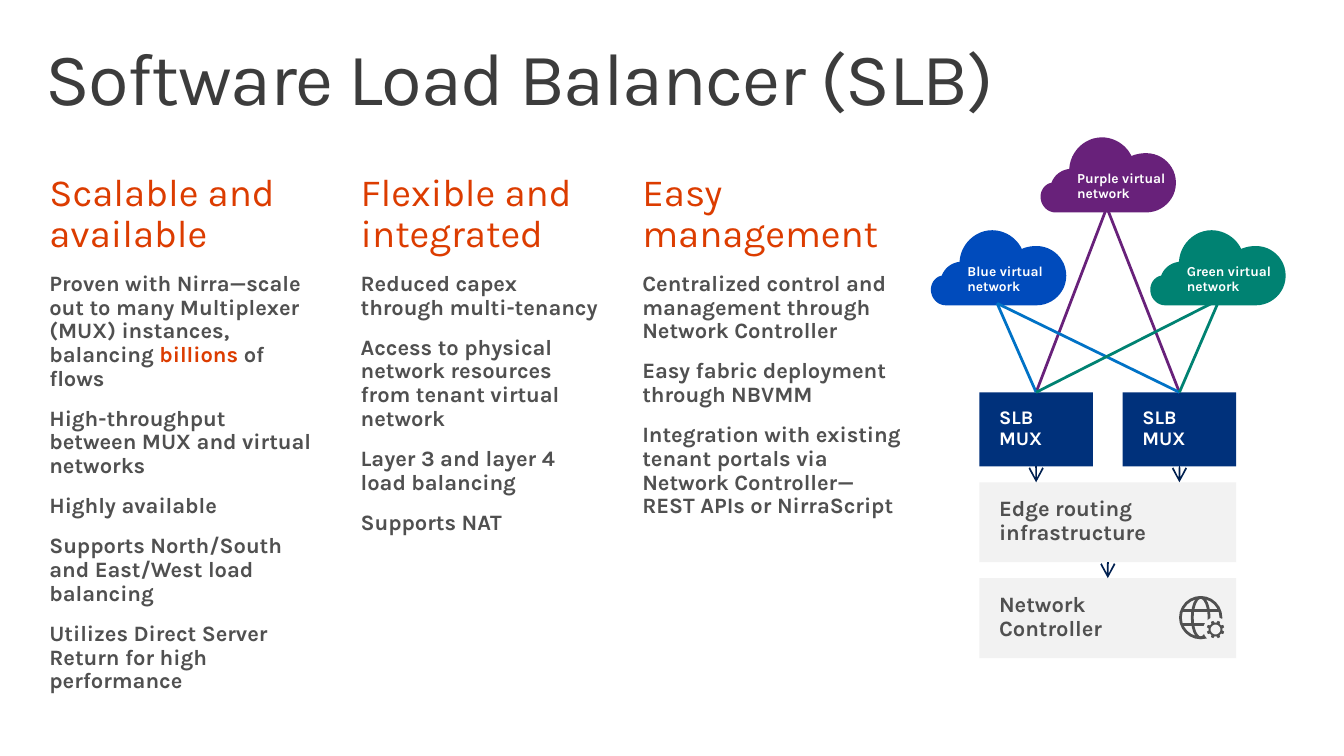
from math import cos, pi, sin

from lxml.etree import SubElement
from pptx import Presentation
from pptx.dml.color import RGBColor
from pptx.enum.shapes import MSO_CONNECTOR as Connector, MSO_SHAPE as Shape
from pptx.enum.text import MSO_ANCHOR as Anchor, PP_ALIGN as Align
from pptx.oxml.ns import qn
from pptx.util import Inches, Pt

FONT = "Karla"
WHITE = RGBColor(0xFF, 0xFF, 0xFF)
CHARCOAL = RGBColor(0x3C, 0x3C, 0x3C)
GRAY = RGBColor(0x50, 0x50, 0x50)
PANEL = RGBColor(0xF2, 0xF2, 0xF2)
ORANGE = RGBColor(0xDC, 0x3C, 0x00)
PURPLE = RGBColor(0x68, 0x21, 0x7A)
BLUE = RGBColor(0x00, 0x4B, 0xBC)
BRIGHT_BLUE = RGBColor(0x00, 0x72, 0xC6)
GREEN = RGBColor(0x00, 0x82, 0x72)
NAVY = RGBColor(0x00, 0x31, 0x7B)
ARROW_NAVY = RGBColor(0x00, 0x20, 0x50)

HIGHLIGHT = "billions"
# Left, width, heading and points of each column
COLUMNS = [
    (0.3, 3, "Scalable and available", [
        "Proven with Nirra—scale out to many Multiplexer (MUX) instances, "
        "balancing billions of flows",
        "High-throughput between MUX and virtual networks",
        "Highly available",
        "Supports North/South and East/West load balancing",
        "Utilizes Direct Server Return for high performance"]),
    (3.45, 2.7, "Flexible and integrated", [
        "Reduced capex\nthrough multi-tenancy",
        "Access to physical\nnetwork resources from tenant virtual network",
        "Layer 3 and layer 4\nload balancing",
        "Supports NAT"]),
    (6.3, 3, "Easy management", [
        "Centralized control and management through Network Controller",
        "Easy fabric deployment through NBVMM",
        "Integration with existing tenant portals via\n"
        "Network Controller—\nREST APIs or NirraScript"]),
]

# Left, top, label, fill, link colour and link start of each cloud
CLOUDS = [
    (1.11, 0, "Purple virtual network", PURPLE, PURPLE, (0.67, 0.71)),
    (0, 0.94, "Blue virtual network", BLUE, BRIGHT_BLUE, (0.67, 0.74)),
    (2.22, 0.94, "Green virtual\nnetwork", GREEN, GREEN, (0.7, 0.7)),
]
CLOUD_START = (0.15, 0.76)
CLOUD_CURVES = [
    ((0.07, 0.76), (0, 0.69), (0, 0.6)),
    ((0, 0.53), (0.05, 0.47), (0.11, 0.46)),
    ((0.14, 0.38), (0.21, 0.33), (0.29, 0.32)),
    ((0.3, 0.14), (0.45, 0), (0.62, 0)),
    ((0.75, 0), (0.87, 0.08), (0.92, 0.19)),
    ((0.96, 0.17), (1.02, 0.16), (1.07, 0.16)),
    ((1.23, 0.16), (1.37, 0.29), (1.37, 0.46)),
    ((1.37, 0.63), (1.23, 0.76), (1.07, 0.76)),
]


def write(para, text, size, color, bold=False, before=0):
    lead, word, rest = text.partition(HIGHLIGHT)
    para.text = lead
    if word:
        span = para.add_run()
        span.text = word
        span.font.color.rgb = ORANGE
        para.add_run().text = rest
    para.alignment = Align.LEFT
    para.line_spacing = 0.9
    para.space_before = Pt(before)
    font = para.font
    font.name, font.size, font.bold = FONT, Pt(size), bold
    font.color.rgb = color


def set_frame(shape, left=0, top=0, right=0):
    frame = shape.text_frame
    frame.word_wrap = True
    frame.vertical_anchor = Anchor.TOP
    frame.margin_left, frame.margin_right = Inches(left), Inches(right)
    frame.margin_top = frame.margin_bottom = Inches(top)
    return frame


def add_text_box(page, x, y, width, height, *margins):
    box = page.shapes.add_textbox(Inches(x), Inches(y), Inches(width), Inches(height))
    return set_frame(box, *margins)


def paint(shape, color):
    shape.shadow.inherit = False
    shape.fill.solid()
    shape.fill.fore_color.rgb = color
    shape.line.fill.background()


def add_line(page, x1, y1, x2, y2, color, width, arrow=False):
    line = page.shapes.add_connector(
        Connector.STRAIGHT, Inches(x1), Inches(y1), Inches(x2), Inches(y2))
    line.line.color.rgb = color
    line.line.width = Pt(width)
    properties = line.line._get_or_add_ln()
    if arrow:
        SubElement(properties, qn("a:tailEnd"), type="arrow", w="lg", len="lg")
    SubElement(line._element.spPr, qn("a:effectLst"))
    return line


def add_outline(page, contours, color):
    contours = [[(Inches(x), Inches(y)) for x, y in points] for points in contours]
    builder = page.shapes.build_freeform(*contours[0][0])
    builder.add_line_segments(contours[0][1:])
    for points in contours[1:]:
        builder.move_to(*points[0])
        builder.add_line_segments(points[1:])
    paint(builder.convert_to_shape(), color)


def add_title(page, x, y, width, height):
    frame = add_text_box(page, x, y, width, height, 0.16, 0.1, 0.16)
    para = frame.paragraphs[0]
    write(para, "Software Load Balancer (SLB)", 54, CHARCOAL)
    para.runs[0].font._element.set("spc", "-100")


def add_column(page, x, y, width, height, heading, points):
    frame = add_text_box(page, x, y, width, height, 0.2, 0.16, 0.1)
    write(frame.paragraphs[0], heading, 28, ORANGE, before=12)
    for point in points:
        write(frame.add_paragraph(), point, 16, GRAY, True, before=12)


def add_cloud(page, x, y, label, color):
    start, points = CLOUD_START, [CLOUD_START]
    for a, b, end in CLOUD_CURVES:
        for step in range(1, 13):
            t = step / 12
            weights = (1 - t) ** 3, 3 * t * (1 - t) ** 2, 3 * t * t * (1 - t), t ** 3
            points.append(tuple(
                sum(w * p[axis] for w, p in zip(weights, (start, a, b, end)))
                for axis in (0, 1)))
        start = end
    add_outline(page, [[(x + dx, y + dy) for dx, dy in points + points[:1]]], color)
    frame = add_text_box(page, x + 0.37, y + 0.35, 0.9, 0.3)
    write(frame.paragraphs[0], label, 10, WHITE, True)


def add_block(page, x, y, width, height, text, size, fill, color):
    block = page.shapes.add_shape(
        Shape.RECTANGLE, Inches(x), Inches(y), Inches(width), Inches(height))
    paint(block, fill)
    write(set_frame(block, 0.2, 0.16, 0.2).paragraphs[0], text, size, color, True)
    return block


def add_ellipse(page, cx, cy, width, height):
    return page.shapes.add_shape(
        Shape.OVAL, Inches(cx - width / 2), Inches(cy - height / 2),
        Inches(width), Inches(height))


def add_globe(page, cx, cy):
    # Rim and meridian, then the two parallels
    for width in (0.41, 0.17):
        ring = add_ellipse(page, cx, cy, width, 0.41)
        ring.shadow.inherit = False
        ring.fill.background()
        ring.line.color.rgb = GRAY
        ring.line.width = Pt(2)
    for dy in (-0.07, 0.07):
        add_line(page, cx - 0.19, cy + dy, cx + 0.19, cy + dy, GRAY, 2)
    # Gear on a cleared disc: eight teeth around a hole
    gx, gy = cx + 0.15, cy + 0.12
    paint(add_ellipse(page, gx, gy, 0.25, 0.25), PANEL)
    teeth = [(tooth * 45 + 22.5 + turn, radius) for tooth in range(8)
             for turn, radius in ((-14, 0.07), (-8, 0.09), (8, 0.09), (14, 0.07))]
    hole = [(-angle, 0.05) for angle in range(0, 360, 15)]
    contours = [[(gx + r * cos(a * pi / 180), gy + r * sin(a * pi / 180))
                 for a, r in ring + ring[:1]] for ring in (teeth, hole)]
    add_outline(page, contours, GRAY)


def add_network_diagram(page, x, y):
    # Multiplexers, routing and controller
    left = x + 0.49
    muxes = [add_block(page, left + i * 1.45, y + 2.58, 1.15, 0.75,
                       "SLB MUX", 14, NAVY, WHITE) for i in range(2)]
    edge, controller = [
        add_block(page, left, y + 3.49 + i * 0.97, 2.6, 0.81, text, 16, PANEL, GRAY)
        for i, text in enumerate(("Edge routing infrastructure", "Network\nController"))]
    # Clouds, each linked to both multiplexers
    for dx, dy, label, fill, link_color, (start_x, start_y) in CLOUDS:
        cx, cy = x + dx, y + dy
        add_cloud(page, cx, cy, label, fill)
        for mux in muxes:
            link = add_line(page, cx + start_x, cy + start_y, left, y + 2.58, link_color, 2)
            link.end_connect(mux, 0)
    # Downward arrows
    for i, mux in enumerate(muxes):
        middle = left + 0.575 + i * 1.45
        arrow = add_line(page, middle, y + 3.33, middle, y + 3.49, ARROW_NAVY, 1.25, True)
        arrow.begin_connect(mux, 2)
    arrow = add_line(page, left + 1.3, y + 4.3, left + 1.3, y + 4.46, ARROW_NAVY, 1.25, True)
    arrow.begin_connect(edge, 2)
    arrow.end_connect(controller, 0)
    add_globe(page, left + 2.24, y + 4.86)


def main():
    deck = Presentation()
    deck.slide_width, deck.slide_height = Inches(13.6), Inches(7.65)
    page = deck.slides.add_slide(deck.slide_layouts[6])
    add_title(page, 0.3, 0.32, 13, 1)
    for x, width, heading, points in COLUMNS:
        add_column(page, x, 1.59, width, 4.67, heading, points)
    add_network_diagram(page, 9.42, 1.39)
    deck.save("out.pptx")


if __name__ == "__main__":
    main()
